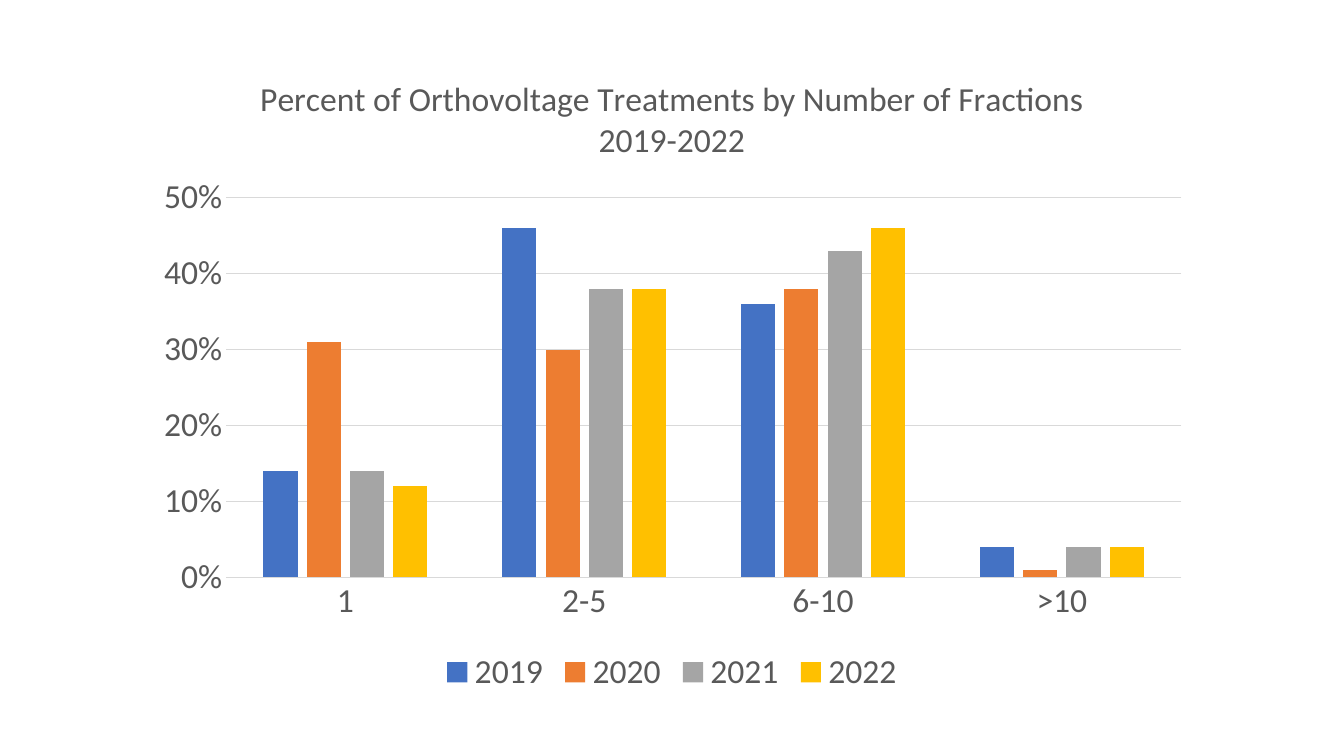
from dataclasses import dataclass

from lxml import etree
from pptx import Presentation
from pptx.chart import data as cd
from pptx.dml.color import RGBColor
from pptx.enum import chart as ch
from pptx.oxml import ns
from pptx.util import Pt


@dataclass(frozen=True)
class Theme:
    font: str = "Calibri"
    size: int = 24
    ink: str = "595959"
    rule: str = "D9D9D9"
    rule_width: float = 0.75


@dataclass(frozen=True)
class Year:
    name: str
    shares: tuple[float, ...]
    color: str


THEME = Theme()
FRACTIONS = ("1", "2-5", "6-10", ">10")
TITLE = ("Percent of Orthovoltage Treatments by Number of Fractions", "2019-2022")
YEARS = (
    Year("2019", (0.14, 0.46, 0.36, 0.04), "4472C4"),
    Year("2020", (0.31, 0.30, 0.38, 0.01), "ED7D31"),
    Year("2021", (0.14, 0.38, 0.43, 0.04), "A5A5A5"),
    Year("2022", (0.12, 0.38, 0.46, 0.04), "FFC000"),
)
PLOT_BOX = {"x": 0.08, "y": 0.22, "w": 0.9, "h": 0.59}


def style_font(font) -> None:
    font.name = THEME.font
    font.size = Pt(THEME.size)
    font.bold = False
    font.color.rgb = RGBColor.from_string(THEME.ink)


def style_rule(line) -> None:
    line.color.rgb = RGBColor.from_string(THEME.rule)
    line.width = Pt(THEME.rule_width)


def add_title(chart) -> None:
    tf = chart.chart_title.text_frame
    tf.text = "\n".join(TITLE)
    for p in tf.paragraphs:
        style_font(p.font)
    chart.chart_title.include_in_layout = False


def style_axes(chart) -> None:
    for axis in (chart.category_axis, chart.value_axis):
        axis.major_tick_mark = axis.minor_tick_mark = ch.XL_TICK_MARK.NONE
        style_font(axis.tick_labels.font)
    style_rule(chart.category_axis.format.line)
    values = chart.value_axis
    values.minimum_scale, values.maximum_scale, values.major_unit = 0, 0.5, 0.1
    values.format.line.fill.background()
    values.has_major_gridlines = True
    style_rule(values.major_gridlines.format.line)
    values.tick_labels.number_format = "0%"
    values.tick_labels.number_format_is_linked = False


def style_columns(chart) -> None:
    plot = chart.plots[0]
    plot.gap_width, plot.overlap = 219, -27
    plot.vary_by_categories = False
    for series, year in zip(plot.series, YEARS):
        series.format.fill.solid()
        series.format.fill.fore_color.rgb = RGBColor.from_string(year.color)


def add_legend(chart) -> None:
    chart.has_legend = True
    chart.legend.position = ch.XL_LEGEND_POSITION.BOTTOM
    chart.legend.include_in_layout = False
    style_font(chart.legend.font)


def place_plot(chart) -> None:
    area = chart.element.find(".//" + ns.qn("c:plotArea"))
    for old in area.findall(ns.qn("c:layout")):
        area.remove(old)
    layout = etree.Element(ns.qn("c:layout"))
    manual = etree.SubElement(layout, ns.qn("c:manualLayout"))
    settings = {"layoutTarget": "inner", "xMode": "edge", "yMode": "edge"} | PLOT_BOX
    for tag, value in settings.items():
        etree.SubElement(manual, ns.qn(f"c:{tag}"), val=str(value))
    area.insert(0, layout)


def main() -> None:
    prs = Presentation()
    prs.slide_width, prs.slide_height = Pt(960), Pt(540)
    s = prs.slides.add_slide(prs.slide_layouts[6])
    data = cd.CategoryChartData(number_format="0%")
    data.categories = FRACTIONS
    for year in YEARS:
        data.add_series(year.name, year.shares)
    chart = s.shapes.add_chart(
        ch.XL_CHART_TYPE.COLUMN_CLUSTERED, Pt(100.8), Pt(40.3), Pt(758.2), Pt(459.4), data
    ).chart
    style_font(chart.font)
    add_title(chart)
    style_axes(chart)
    style_columns(chart)
    add_legend(chart)
    place_plot(chart)
    prs.save("out.pptx")


if __name__ == "__main__":
    main()
